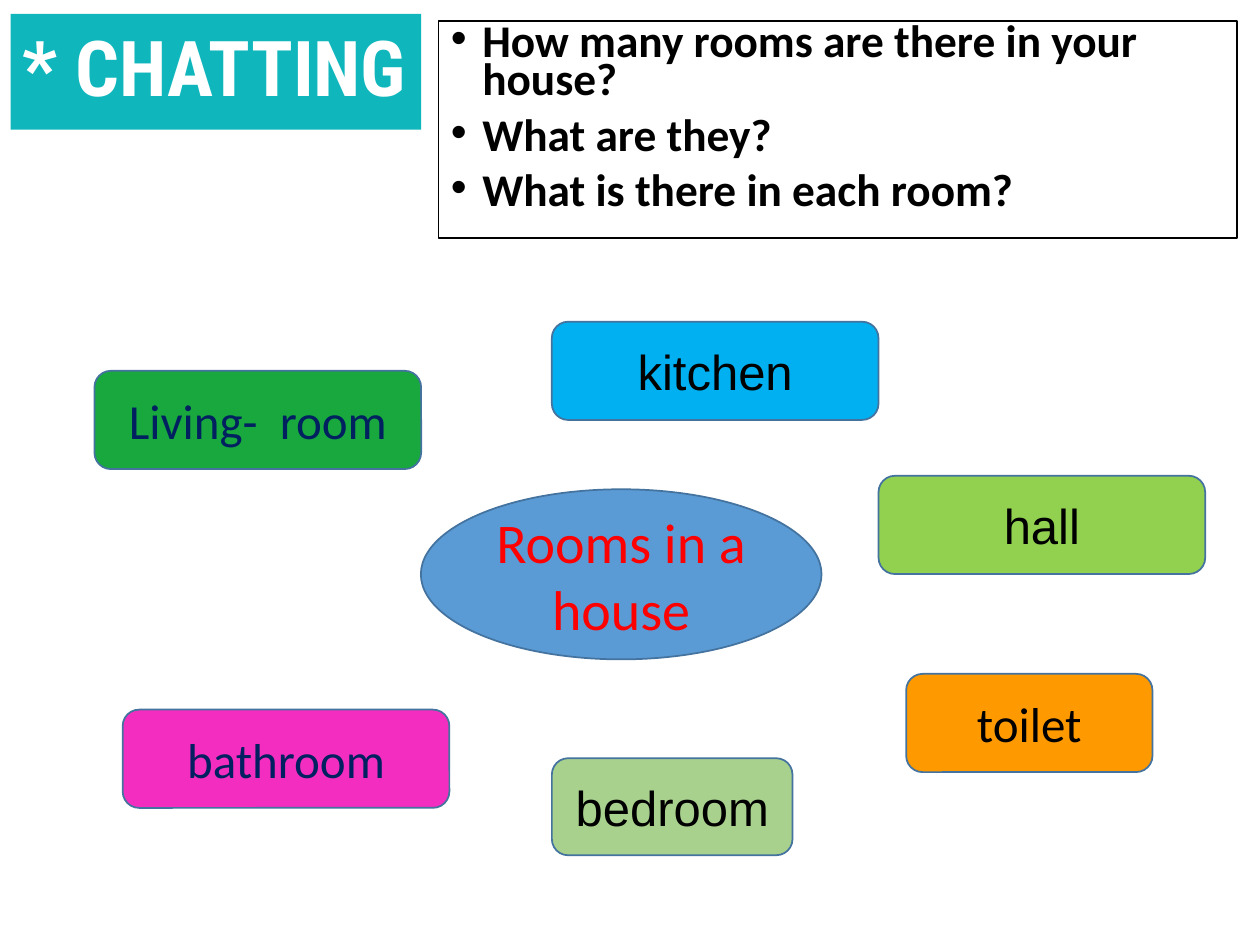
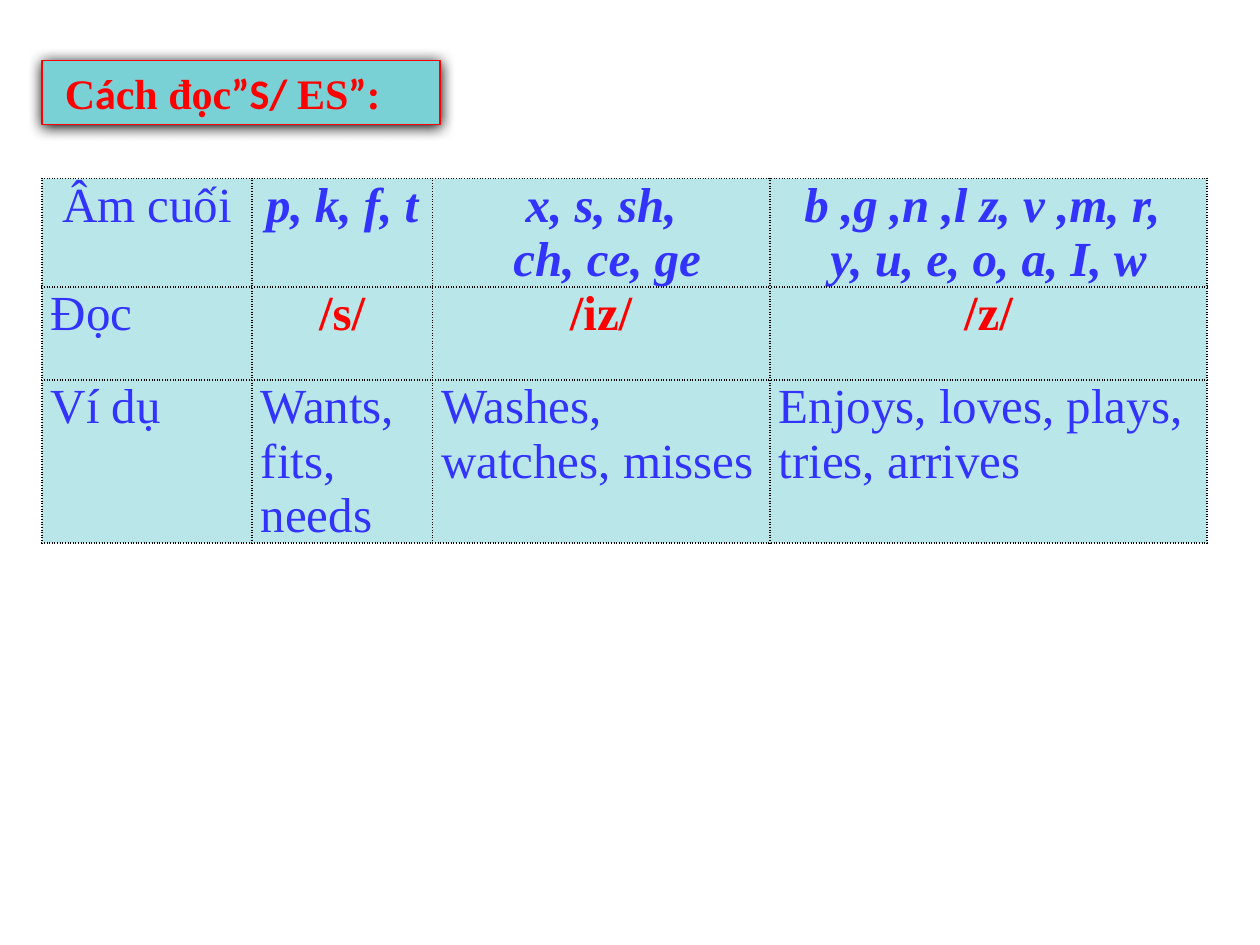
from lxml import etree
from pptx import Presentation
from pptx.dml.color import RGBColor
from pptx.enum.shapes import MSO_SHAPE
from pptx.enum.text import MSO_ANCHOR, PP_ALIGN
from pptx.oxml import parse_xml
from pptx.oxml.ns import nsdecls, qn
from pptx.util import Inches, Pt

RECTANGLE = MSO_SHAPE.RECTANGLE
ROUNDED = MSO_SHAPE.ROUNDED_RECTANGLE
OVAL = MSO_SHAPE.OVAL
LEFT, CENTER = PP_ALIGN.LEFT, PP_ALIGN.CENTER
TOP, MIDDLE = MSO_ANCHOR.TOP, MSO_ANCHOR.MIDDLE

COLUMNS, ROWS = 100, 75
SANS, ARIAL, CONDENSED, SERIF = "Calibri", "Arial", "Roboto Condensed", "Times New Roman"
COLORS = {
    "white": "FFFFFF", "black": "000000", "red": "FF0000", "navy": "002060",
    "outline": "43739E", "blue": "5B9BD5", "sky": "00B0F0", "lime": "92D050",
    "pink": "F32DBF", "green": "18A83E", "sage": "A9D18E", "orange": "FF9900",
    "teal": "0FB7BD", "aqua": "79D1D5", "violet": "3333FF",
}


def rgb(name):
    return RGBColor.from_string(COLORS[name])


def write_text(frame, paragraphs, *, font=SANS, size=28, color="black", bold=False,
               italic=False, align=LEFT, spacing=None, before=None, bullet=None):
    for index, spans in enumerate(paragraphs):
        para = frame.paragraphs[0] if index == 0 else frame.add_paragraph()
        para.alignment = align
        if spacing:
            para.line_spacing = spacing
        if before:
            para.space_before = Pt(before)
        if bullet:
            add_bullet(para, bullet)
        for words, face in [(spans, font)] if isinstance(spans, str) else spans:
            span = para.add_run()
            span.text = words
            span.font.name = face
            span.font.size = Pt(size)
            span.font.bold = bold
            span.font.italic = italic
            span.font.color.rgb = rgb(color)


def add_bullet(para, mark):
    properties = para._p.get_or_add_pPr()
    indent = Inches(0.25)
    properties.set("marL", str(indent))
    properties.set("indent", str(-indent))
    etree.SubElement(properties, qn("a:buFont")).set("typeface", ARIAL)
    etree.SubElement(properties, qn("a:buChar")).set("char", mark)


def add_shadow(shape, color, blur, distance):
    shape._element.spPr.append(parse_xml(
        f'<a:effectLst {nsdecls("a")}><a:outerShdw blurRad="{Pt(blur)}" '
        f'dist="{Pt(distance)}" dir="5400000" algn="t" rotWithShape="0">'
        f'<a:srgbClr val="{COLORS[color]}"/></a:outerShdw></a:effectLst>'))


def style_cell(cell, fill, opacity, border):
    cell.fill.solid()
    cell.fill.fore_color.rgb = rgb(fill)
    properties = cell._tc.get_or_add_tcPr()
    tint = properties.find(".//" + qn("a:srgbClr"))
    etree.SubElement(tint, qn("a:alpha")).set("val", str(opacity * 1000))
    for position, side in enumerate("LRTB"):
        properties.insert(position, parse_xml(
            f'<a:ln{side} {nsdecls("a")} w="{Pt(1)}"><a:solidFill>'
            f'<a:srgbClr val="{COLORS[border]}"/></a:solidFill>'
            f'<a:prstDash val="sysDot"/></a:ln{side}>'))


class Deck:
    def __init__(self):
        self.file = Presentation()
        self.file.slide_width, self.file.slide_height = Inches(10), Inches(7.5)
        self.column = self.file.slide_width / COLUMNS
        self.row = self.file.slide_height / ROWS
        self.page = None

    def add_page(self):
        self.page = self.file.slides.add_slide(self.file.slide_layouts[6])

    def place(self, left, top, width, height):
        return (round(left * self.column), round(top * self.row),
                round(width * self.column), round(height * self.row))

    def box(self, area, paragraphs, *, fill, kind=RECTANGLE, line=None, weight=1,
            anchor=MIDDLE, **style):
        shape = self.page.shapes.add_shape(kind, *self.place(*area))
        shape.shadow.inherit = False
        shape.fill.solid()
        shape.fill.fore_color.rgb = rgb(fill)
        if line:
            shape.line.color.rgb = rgb(line)
            shape.line.width = Pt(weight)
        else:
            shape.line.fill.background()
        shape.text_frame.word_wrap = True
        shape.text_frame.vertical_anchor = anchor
        write_text(shape.text_frame, paragraphs, **style)
        return shape

    def bubble(self, area, words, fill, kind=ROUNDED, **style):
        return self.box(area, [words], fill=fill, kind=kind, line="outline",
                        align=CENTER, **style)

    def heading(self, area, spans):
        shape = self.box(area, [spans], fill="aqua", line="red", weight=0.75,
                         size=24, color="red", bold=True)
        shape.shadow.inherit = True
        add_shadow(shape, "black", blur=8.5, distance=1)

    def table(self, left, top, widths, heights, rows, styles):
        area = self.place(left, top, sum(widths), sum(heights))
        table = self.page.shapes.add_table(len(rows), len(widths), *area).table
        table.first_row = table.horz_banding = False
        for column, width in zip(table.columns, widths):
            column.width = round(width * self.column)
        for row, height, texts, row_styles in zip(table.rows, heights, rows, styles):
            row.height = round(height * self.row)
            for index, (cell, paragraphs) in enumerate(zip(row.cells, texts)):
                cell.margin_left = cell.margin_right = Inches(0.07)
                cell.margin_top = cell.margin_bottom = 0
                style_cell(cell, "aqua", 52, "black")
                write_text(cell.text_frame, paragraphs, font=SERIF,
                           **row_styles[min(index, 1)])


def build_chatting(deck):
    deck.add_page()
    deck.bubble((33.4, 38.83, 31.8, 13.5), "Rooms in a house", "blue", OVAL,
                size=32, color="red")
    wide, high = 25.93, 7.8
    rooms = [
        ("kitchen", 43.8, 25.53, wide, "sky", ARIAL, "black"),
        ("hall", 69.73, 37.76, wide, "lime", ARIAL, "black"),
        ("bathroom", 9.74, 56.32, wide, "pink", SANS, "navy"),
        ("Living-  room", 7.5, 29.43, wide, "green", SANS, "navy"),
        ("bedroom", 43.8, 60.18, 19.1, "sage", ARIAL, "black"),
        ("toilet", 71.92, 53.48, 19.55, "orange", SANS, "black"),
    ]
    for name, left, top, width, fill, font, color in rooms:
        height = 7.7 if name == "bedroom" else high
        deck.bubble((left, top, width, height), name, fill, font=font, color=color)
    questions = ["How many rooms are there in your house?", "What are they?",
                 "What is there in each room?"]
    deck.box((34.8, 1.64, 63.4, 17.27), questions, fill="white", line="black",
             anchor=TOP, size=25.9, bold=True, spacing=0.7, before=10, bullet="•")
    deck.box((0.84, 1.1, 32.6, 9.2), ["* CHATTING"], fill="teal", font=CONDENSED,
             size=44, color="white", bold=True, spacing=0.9)


def build_endings(deck):
    deck.add_page()
    plain = {"color": "violet"}
    centered = {"color": "violet", "align": CENTER}
    letters = {**centered, "bold": True, "italic": True}
    sounds = {"color": "red", "align": CENTER, "bold": True}
    rows = [
        [["Âm cuối"], ["p, k, f, t"], ["x, s, sh,", " ch, ce, ge"],
         ["b ,g ,n ,l z, v ,m, r, ", "y, u, e, o, a, I, w"]],
        [["Đọc"], ["/s/"], ["/iz/"], ["/z/"]],
        [["Ví dụ"], ["Wants, fits, needs"], ["Washes, watches, misses"],
         ["Enjoys, loves, plays, tries, arrives"]],
    ]
    deck.table(3.34, 14.17, [16.67, 14.3, 26.8, 34.7], [8.5, 7.4, 12.9], rows,
               [(centered, letters), (plain, sounds), (plain, plain)])
    deck.heading((3.33, 4.8, 31.6, 5.08), [
        (" C", SERIF), ("á", SANS), ("ch đọc", SERIF), ("”S/ ", SANS),
        ("ES", SERIF), ("”", SANS), (":", SERIF)])


def main():
    deck = Deck()
    build_chatting(deck)
    build_endings(deck)
    deck.file.save("out.pptx")


if __name__ == "__main__":
    main()
